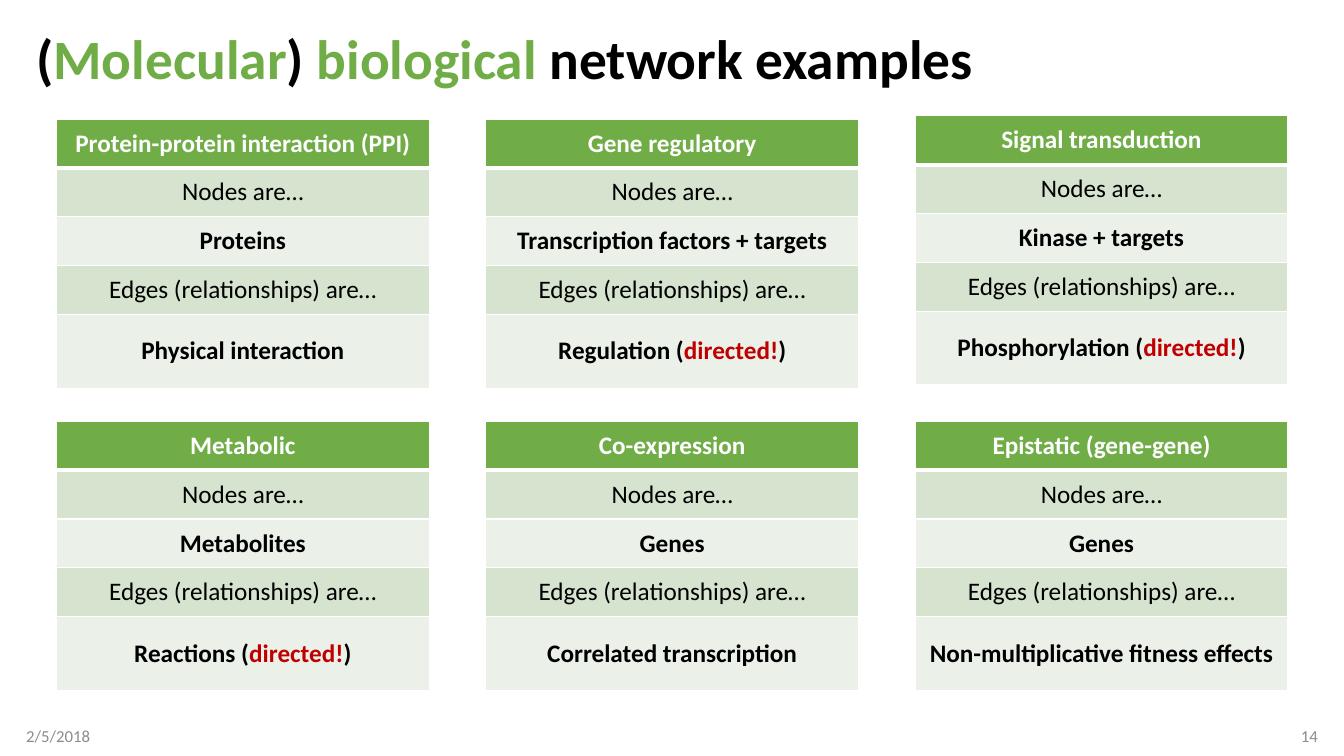
"""Builds a slide comparing six kinds of molecular biological networks."""
from lxml import etree
from pptx import Presentation
from pptx.dml.color import RGBColor
from pptx.enum.text import MSO_ANCHOR, MSO_AUTO_SIZE, PP_ALIGN
from pptx.oxml.ns import qn
from pptx.util import Cm, Pt

MIDDLE = MSO_ANCHOR.MIDDLE
NO_AUTOFIT = MSO_AUTO_SIZE.NONE
LEFT, CENTER, RIGHT = PP_ALIGN.LEFT, PP_ALIGN.CENTER, PP_ALIGN.RIGHT

GREEN = RGBColor(0x70, 0xAD, 0x47)
BAND_DARK = RGBColor(0xD5, 0xE3, 0xCF)
BAND_LIGHT = RGBColor(0xEB, 0xF1, 0xE9)
RED = RGBColor(0xC0, 0x00, 0x00)
BLACK = RGBColor(0x00, 0x00, 0x00)
WHITE = RGBColor(0xFF, 0xFF, 0xFF)
GREY = RGBColor(0x8C, 0x8C, 0x8C)
FONT = "Calibri"

HEADING = [("(", BLACK), ("Molecular", GREEN), (") ", BLACK),
           ("biological", GREEN), (" network examples", BLACK)]
DATE, PAGE = "2/5/2018", "14"
NODES_LABEL = "Nodes are…"
EDGES_LABEL = "Edges (relationships) are…"
NETWORKS = [
    {"name": "Protein-protein interaction (PPI)", "nodes": "Proteins",
     "edges": "Physical interaction", "directed": False, "top": 3.0},
    {"name": "Gene regulatory", "nodes": "Transcription factors + targets",
     "edges": "Regulation", "directed": True, "top": 3.0},
    {"name": "Signal transduction", "nodes": "Kinase + targets",
     "edges": "Phosphorylation", "directed": True, "top": 2.92},
    {"name": "Metabolic", "nodes": "Metabolites",
     "edges": "Reactions", "directed": True, "top": 10.62},
    {"name": "Co-expression", "nodes": "Genes",
     "edges": "Correlated transcription", "directed": False, "top": 10.62},
    {"name": "Epistatic (gene-gene)", "nodes": "Genes",
     "edges": "Non-multiplicative fitness effects", "directed": False, "top": 10.62},
]

COLUMNS = 3
GRID_LEFT, GRID_PITCH, TABLE_WIDTH = 1.42, 10.82, 9.4
ROW_HEIGHTS = [1.23, 1.23, 1.23, 1.23, 1.86]
MARGIN, FOOTER_TOP, FOOTER_WIDTH, FOOTER_HEIGHT = 0.66, 18.03, 7.62, 1.02


def write_runs(paragraph, pieces, size, bold, align):
    paragraph.alignment = align
    for text, color in pieces:
        run = paragraph.add_run()
        run.text = text
        run.font.name = FONT
        run.font.size = Pt(size)
        run.font.bold = bold
        run.font.color.rgb = color


def add_borders(cell, top, bottom):
    properties = cell._tc.get_or_add_tcPr()
    for side, width in (("L", 1), ("R", 1), ("T", top), ("B", bottom)):
        line = etree.SubElement(properties, qn(f"a:ln{side}"), w=str(Pt(width)))
        fill = etree.SubElement(line, qn("a:solidFill"))
        etree.SubElement(fill, qn("a:srgbClr"), val=str(WHITE))


def add_network(slide, index, network):
    edges = [(network["edges"], BLACK)]
    if network["directed"]:
        edges = [(network["edges"] + " (", BLACK), ("directed!", RED), (")", BLACK)]
    rows = [
        ([(network["name"], WHITE)], True, GREEN),
        ([(NODES_LABEL, BLACK)], False, BAND_DARK),
        ([(network["nodes"], BLACK)], True, BAND_LIGHT),
        ([(EDGES_LABEL, BLACK)], False, BAND_DARK),
        (edges, True, BAND_LIGHT),
    ]
    left = GRID_LEFT + index % COLUMNS * GRID_PITCH
    table = slide.shapes.add_table(
        len(rows), 1, Cm(left), Cm(network["top"]),
        Cm(TABLE_WIDTH), Cm(sum(ROW_HEIGHTS))).table
    for number, (pieces, bold, color) in enumerate(rows):
        table.rows[number].height = Cm(ROW_HEIGHTS[number])
        cell = table.cell(number, 0)
        cell.vertical_anchor = MIDDLE
        add_borders(cell, 3 if number == 1 else 1, 3 if number == 0 else 1)
        cell.fill.solid()
        cell.fill.fore_color.rgb = color
        write_runs(cell.text_frame.paragraphs[0], pieces, 18, bold, CENTER)


def add_footer(slide, left, text, align):
    frame = slide.shapes.add_textbox(
        Cm(left), Cm(FOOTER_TOP), Cm(FOOTER_WIDTH), Cm(FOOTER_HEIGHT)).text_frame
    frame.word_wrap = True
    frame.vertical_anchor = MIDDLE
    if align == LEFT:
        frame.margin_left = 0
    else:
        frame.margin_right = 0
    write_runs(frame.paragraphs[0], [(text, GREY)], 12, False, align)


def main():
    deck = Presentation()
    deck.slide_width, deck.slide_height = Cm(33.87), Cm(19.05)
    slide = deck.slides.add_slide(deck.slide_layouts[5])

    heading = slide.shapes.title
    heading.left, heading.top = Cm(MARGIN), Cm(0.64)
    heading.width, heading.height = Cm(32.54), Cm(1.83)
    frame = heading.text_frame
    frame.auto_size = NO_AUTOFIT
    frame.vertical_anchor = MIDDLE
    frame.paragraphs[0].line_spacing = 0.9
    write_runs(frame.paragraphs[0], HEADING, 39.6, True, LEFT)

    for index, network in enumerate(NETWORKS):
        add_network(slide, index, network)

    add_footer(slide, MARGIN, DATE, LEFT)
    add_footer(slide, 33.87 - MARGIN - FOOTER_WIDTH, PAGE, RIGHT)
    deck.save("out.pptx")


if __name__ == "__main__":
    main()
